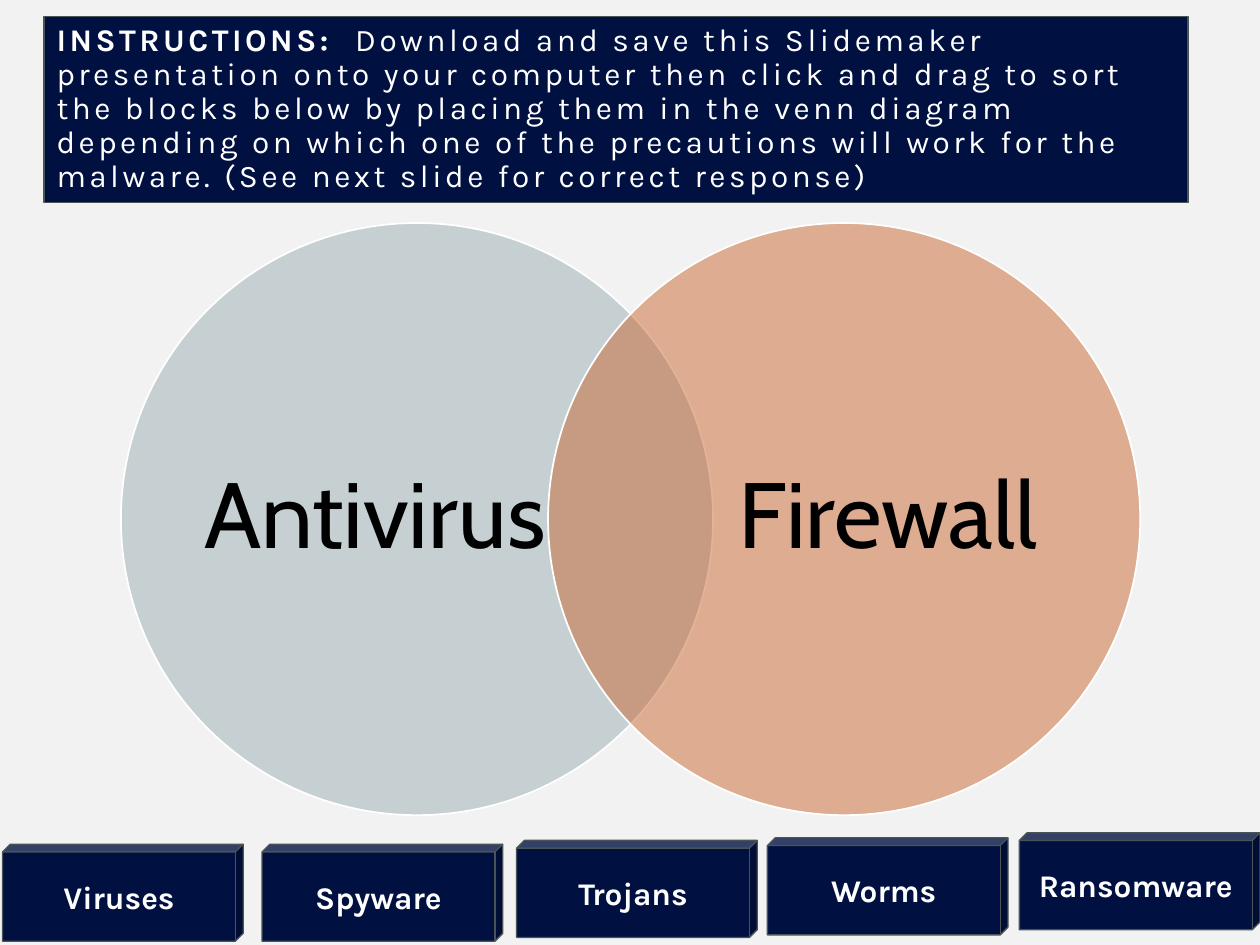
"""Build the antivirus and firewall sorting slide."""
from lxml import etree
from pptx import Presentation
from pptx.dml.color import RGBColor
from pptx.enum import shapes, text
from pptx.oxml import ns
from pptx.util import Inches, Pt

COLORS = {
    "background": "F2F2F2", "navy": "001141", "edge": "4A5356",
    "white": "FFFFFF", "black": "000000",
    "antivirus": "9BAFB5", "firewall": "C96731",
}


def add_block(kind, box, fill, line, line_width):
    block = slide.shapes.add_shape(kind, *map(Inches, box))
    block.shadow.inherit = False
    block.fill.solid()
    block.fill.fore_color.rgb = RGBColor.from_string(COLORS[fill])
    block.line.color.rgb = RGBColor.from_string(COLORS[line])
    block.line.width = Pt(line_width)
    return block


def write(holder, wording, align, font, size, color, inset):
    frame = holder.text_frame
    frame.word_wrap = True
    frame.vertical_anchor = text.MSO_ANCHOR.MIDDLE
    frame.margin_left = frame.margin_right = Inches(inset)
    frame.margin_top = frame.margin_bottom = Inches(inset)
    paragraph = frame.paragraphs[0]
    paragraph.alignment = align
    for words, bold in wording:
        run = paragraph.add_run()
        run.text = words
        run.font.name = font
        run.font.size = Pt(size)
        run.font.bold = bold
        run.font.color.rgb = RGBColor.from_string(COLORS[color])
    return paragraph


prs = Presentation()
prs.slide_width, prs.slide_height = Inches(10), Inches(7.5)
slide = prs.slides.add_slide(prs.slide_layouts[6])
slide.background.fill.solid()
slide.background.fill.fore_color.rgb = RGBColor.from_string(COLORS["background"])

instructions = add_block(shapes.MSO_SHAPE.RECTANGLE, (0.35, 0.13, 9.08, 1.48), "navy", "edge", 0.75)
guidance = write(instructions, [
    ("INSTRUCTIONS:  ", True),
    ("Download and save this Slidemaker presentation onto your computer then click and "
     "drag to sort the blocks below by placing them in the venn diagram depending on which "
     "one of the precautions will work for the malware. (See next slide for correct response)",
     False),
], text.PP_ALIGN.LEFT, "Karla", 18, "white", 0.1)
guidance.line_spacing = 0.9
for run in guidance.runs:
    run.font._element.set("spc", "200")

malware_blocks = [
    ("Ransomware", 8.09, 6.61), ("Worms", 6.09, 6.65), ("Trojans", 4.1, 6.67),
    ("Viruses", 0.02, 6.7), ("Spyware", 2.08, 6.7),
]
for malware, left, top in malware_blocks:
    block = add_block(shapes.MSO_SHAPE.CUBE, (left, top, 1.91, 0.77), "navy", "edge", 0.75)
    block.adjustments[0] = 0.08
    write(block, [(malware, True)], text.PP_ALIGN.CENTER, "Karla", 18, "white", 0.1)

for precaution, circle_left, label_left in [("Antivirus", 0.96, 1.62), ("Firewall", 4.35, 5.69)]:
    circle = add_block(shapes.MSO_SHAPE.OVAL, (circle_left, 1.77, 4.7, 4.7),
                       precaution.lower(), "white", 1)
    tint = circle._element.spPr.find(ns.qn("a:solidFill")).find(ns.qn("a:srgbClr"))
    etree.SubElement(tint, ns.qn("a:alpha"), val="50000")
    label = slide.shapes.add_textbox(*map(Inches, (label_left, 2.32, 2.71, 3.59)))
    title = write(label, [(precaution, False)], text.PP_ALIGN.CENTER, "Cabin", 53, "black", 0)
    title.line_spacing = 0.9

prs.save("out.pptx")
